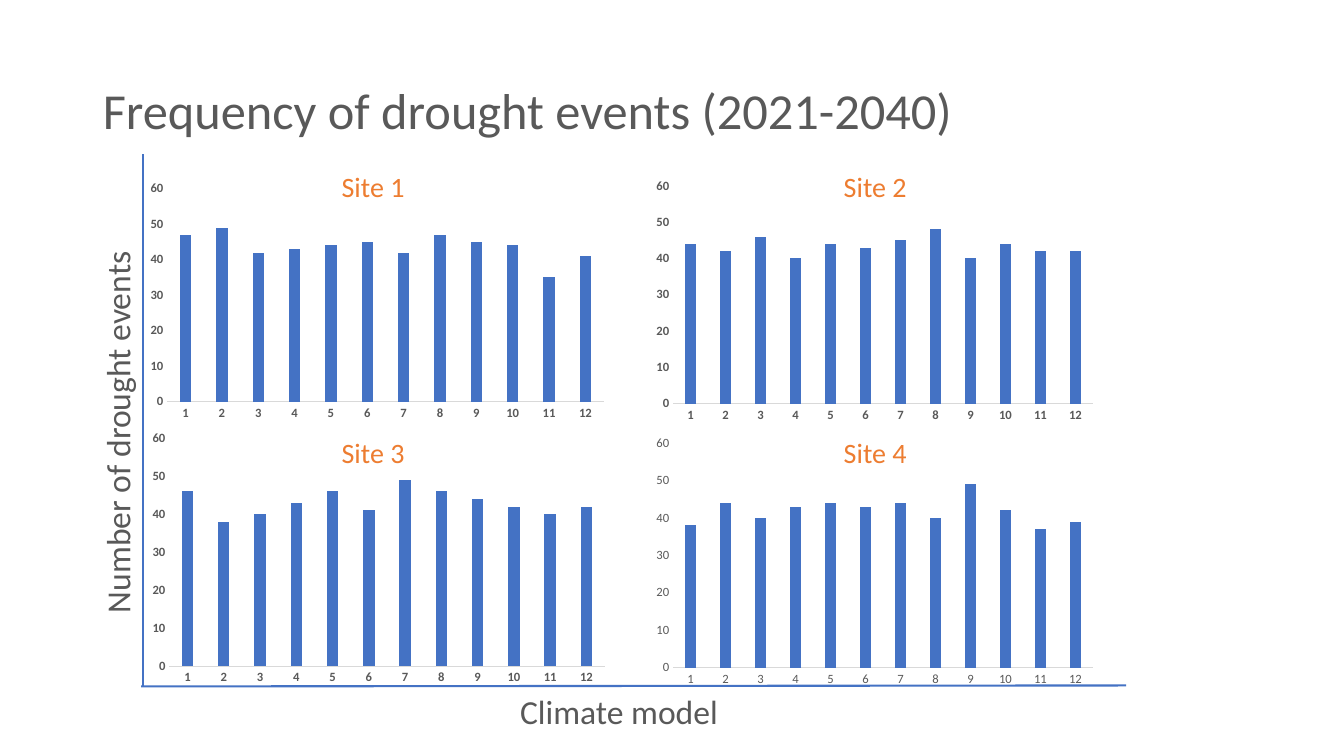
"""Build the slide on drought frequency at four sites."""
from lxml import etree
from pptx import Presentation
from pptx.chart.data import CategoryChartData
from pptx.dml.color import RGBColor
from pptx.enum.chart import XL_CHART_TYPE as ChartType, XL_TICK_MARK as TickMark
from pptx.enum.shapes import MSO_CONNECTOR as Connector
from pptx.enum.text import MSO_ANCHOR as Anchor, PP_ALIGN as Align
from pptx.oxml.ns import qn
from pptx.util import Inches, Pt

GREY, BLUE, ORANGE, PALE = "595959", "4472C4", "ED7D31", "D9D9D9"
FONT = "Calibri"


def color(code):
    return RGBColor.from_string(code)


def write(box, text, size, code):
    box.text_frame.word_wrap = True
    para = box.text_frame.paragraphs[0]
    para.alignment = Align.LEFT
    span = para.add_run()
    span.text = text
    span.font.name = FONT
    span.font.size = Pt(size)
    span.font.color.rgb = color(code)
    return para


deck = Presentation()
deck.slide_width, deck.slide_height = Inches(13.33), Inches(7.5)
page = deck.slides.add_slide(deck.slide_layouts[5])

title = page.shapes.title
title.left, title.top = Inches(0.92), Inches(0.4)
title.width, title.height = Inches(11.5), Inches(1.45)
title.text_frame.vertical_anchor = Anchor.MIDDLE
write(title, "Frequency of drought events (2021-2040)", 36, GREY).line_spacing = 0.9

sites = [
    ("Site 1", (1.4, 1.75, 4.68, 2.47), True, (47, 49, 42, 43, 44, 45, 42, 47, 45, 44, 35, 41)),
    ("Site 2", (6.42, 1.72, 4.51, 2.52), True, (44, 42, 46, 40, 44, 43, 45, 48, 40, 44, 42, 42)),
    ("Site 3", (1.42, 4.22, 4.67, 2.63), True, (46, 38, 40, 43, 46, 41, 49, 46, 44, 42, 40, 42)),
    ("Site 4", (6.42, 4.27, 4.51, 2.59), False, (38, 44, 40, 43, 44, 43, 44, 40, 49, 42, 37, 39)),
]
for site, place, bold, events in sites:
    data = CategoryChartData()
    data.categories = [str(model) for model in range(1, 13)]
    data.add_series("Series 1", events)
    chart = page.shapes.add_chart(
        ChartType.COLUMN_CLUSTERED, *[Inches(length) for length in place], data
    ).chart
    chart.has_title = False
    chart.has_legend = False
    chart.font.name = FONT
    chart.font.size = Pt(10)

    plot = chart.plots[0]
    plot.vary_by_categories = False
    plot.gap_width, plot.overlap = 219, -27
    bars = plot.series[0].format.fill
    bars.solid()
    bars.fore_color.rgb = color(BLUE)

    for axis in (chart.category_axis, chart.value_axis):
        axis.has_major_gridlines = False
        axis.major_tick_mark = axis.minor_tick_mark = TickMark.NONE
        label = axis.tick_labels.font
        label.name, label.size, label.bold = FONT, Pt(9), bold
        label.color.rgb = color(GREY)
    chart.category_axis.format.line.color.rgb = color(PALE)
    chart.category_axis.format.line.width = Pt(0.75)
    chart.value_axis.format.line.fill.background()
    chart.value_axis.minimum_scale = 0
    chart.value_axis.maximum_scale = 60
    chart.value_axis.major_unit = 10

for index, (site, *rest) in enumerate(sites):
    row, column = divmod(index, 2)
    box = page.shapes.add_textbox(
        Inches(3.29 + 4.98 * column), Inches(1.63 + 2.64 * row), Inches(3.54), Inches(0.44)
    )
    write(box, site, 20, ORANGE)

for text, left, top, width, turn in [
    ("Number of drought events", -1.27, 3.5, 4.86, 270),
    ("Climate model", 5.06, 6.81, 3.54, 0),
]:
    box = page.shapes.add_textbox(Inches(left), Inches(top), Inches(width), Inches(0.5))
    box.rotation = turn
    write(box, text, 24, GREY)

for ends in [(1.42, 1.53, 1.42, 6.81), (1.4, 6.81, 11.17, 6.8)]:
    line = page.shapes.add_connector(Connector.STRAIGHT, *[Inches(end) for end in ends])
    line.line.color.rgb = color(BLUE)
    line.line.width = Pt(1.5)
    etree.SubElement(line._element.spPr, qn("a:effectLst"))

deck.save("out.pptx")
